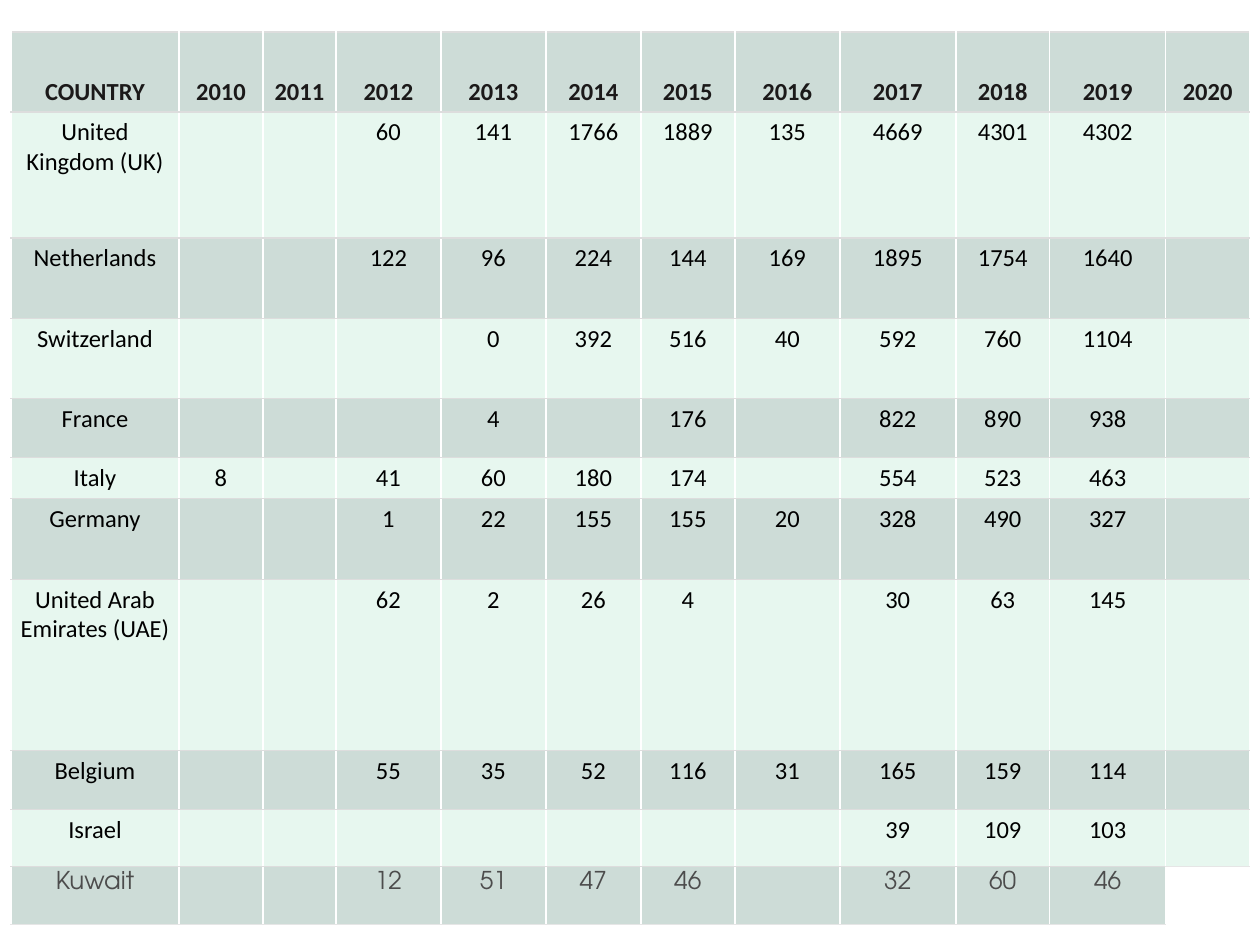
from lxml import etree
from pptx import Presentation
from pptx.dml.color import RGBColor
from pptx.enum.text import MSO_ANCHOR, PP_ALIGN
from pptx.oxml.ns import qn
from pptx.util import Pt

CENTER = PP_ALIGN.CENTER
TOP, BOTTOM = MSO_ANCHOR.TOP, MSO_ANCHOR.BOTTOM
PX = 914400 / 126
COLORS = {"dark": "CDDCD7", "light": "E7F7EF", "head": "1B1919", "body": "000000",
          "last": "4C4C4C", "rule": "DDDDDD", "edge": "E6E6E6", "gap": "FFFFFF"}
HEAD = ["COUNTRY", *map(str, range(2010, 2021))]
ROWS = [
    ("United Kingdom (UK)", "", "", 60, 141, 1766, 1889, 135, 4669, 4301, 4302, ""),
    ("Netherlands", "", "", 122, 96, 224, 144, 169, 1895, 1754, 1640, ""),
    ("Switzerland", "", "", "", 0, 392, 516, 40, 592, 760, 1104, ""),
    ("France", "", "", "", 4, "", 176, "", 822, 890, 938, ""),
    ("Italy", 8, "", 41, 60, 180, 174, "", 554, 523, 463, ""),
    ("Germany", "", "", 1, 22, 155, 155, 20, 328, 490, 327, ""),
    ("United Arab Emirates (UAE)", "", "", 62, 2, 26, 4, "", 30, 63, 145, ""),
    ("Belgium", "", "", 55, 35, 52, 116, 31, 165, 159, 114, ""),
    ("Israel", "", "", "", "", "", "", "", 39, 109, 103, ""),
    ("Kuwait", "", "", 12, 51, 47, 46, "", 32, 60, 46, ""),
]
WIDTHS = [168, 84, 73, 105, 105, 95, 94, 105, 116, 94, 116, 84]
HEIGHTS = [80, 126, 81, 80, 59, 41, 81, 171, 59, 57, 58]
LEFT, UP, INSET = 11, 32, 5


def emu(px):
    return round(px * PX)


def write(cell, text, font="Calibri", color="body", bold=False, anchor=TOP, size=14):
    cell.margin_left = cell.margin_right = emu(INSET)
    cell.margin_top = cell.margin_bottom = emu(INSET)
    cell.vertical_anchor = anchor
    para = cell.text_frame.paragraphs[0]
    para.alignment = CENTER
    if text == "":
        end = etree.SubElement(para._p, qn("a:endParaRPr"))
        end.set("sz", str(size * 100))
        return
    run = para.add_run()
    run.text = str(text)
    run.font.name = font
    run.font.size = Pt(size)
    run.font.bold = bold
    run.font.color.rgb = RGBColor.from_string(COLORS[color])


def border(cell, **sides):
    props = cell._tc.get_or_add_tcPr()
    for spot, (side, (color, width)) in enumerate(sides.items()):
        line = etree.Element(qn("a:ln" + side), w=str(Pt(width)))
        if color:
            fill = etree.SubElement(line, qn("a:solidFill"))
            etree.SubElement(fill, qn("a:srgbClr"), val=COLORS[color])
        else:
            etree.SubElement(line, qn("a:noFill"))
        props.insert(spot, line)


def main():
    deck = Presentation()
    deck.slide_width, deck.slide_height = emu(1260), emu(945)
    slide = deck.slides.add_slide(deck.slide_layouts[6])
    data = [HEAD, *ROWS]
    table = slide.shapes.add_table(len(data), len(HEAD), emu(LEFT), emu(UP),
                                   emu(sum(WIDTHS)), emu(sum(HEIGHTS))).table
    table.first_row = table.horz_banding = False
    for col, width in zip(table.columns, WIDTHS):
        col.width = emu(width)
    for row, height in zip(table.rows, HEIGHTS):
        row.height = emu(height)

    end, last = len(data) - 1, len(HEAD) - 1
    styles = {0: {"color": "head", "bold": True, "anchor": BOTTOM},
              end: {"color": "last", "font": "TeX Gyre Adventor"}}
    for r, row in enumerate(data):
        for c, text in enumerate(row):
            cell = table.cell(r, c)
            write(cell, text, **styles.get(r, {}))
            blank = r == end and c == last
            if blank:
                cell.fill.background()
            else:
                cell.fill.solid()
                tone = "light" if r % 2 else "dark"
                cell.fill.fore_color.rgb = RGBColor.from_string(COLORS[tone])
            low = "edge" if r == end or (r == end - 1 and c == last) else "rule"
            border(cell, L=("gap", 1), R=("gap", 1),
                   T=("edge" if blank else "rule", 0.75),
                   B=(None if blank else low, 0.75))
    deck.save("out.pptx")


if __name__ == "__main__":
    main()
